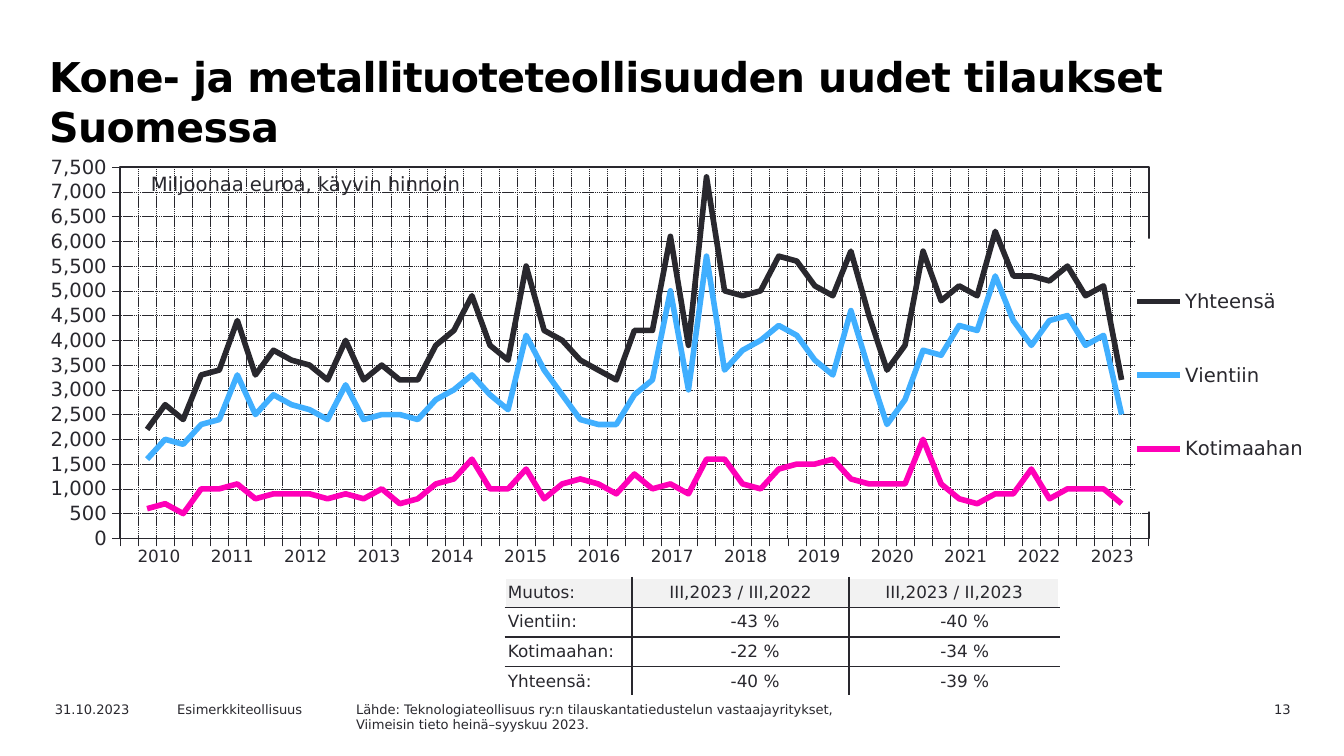
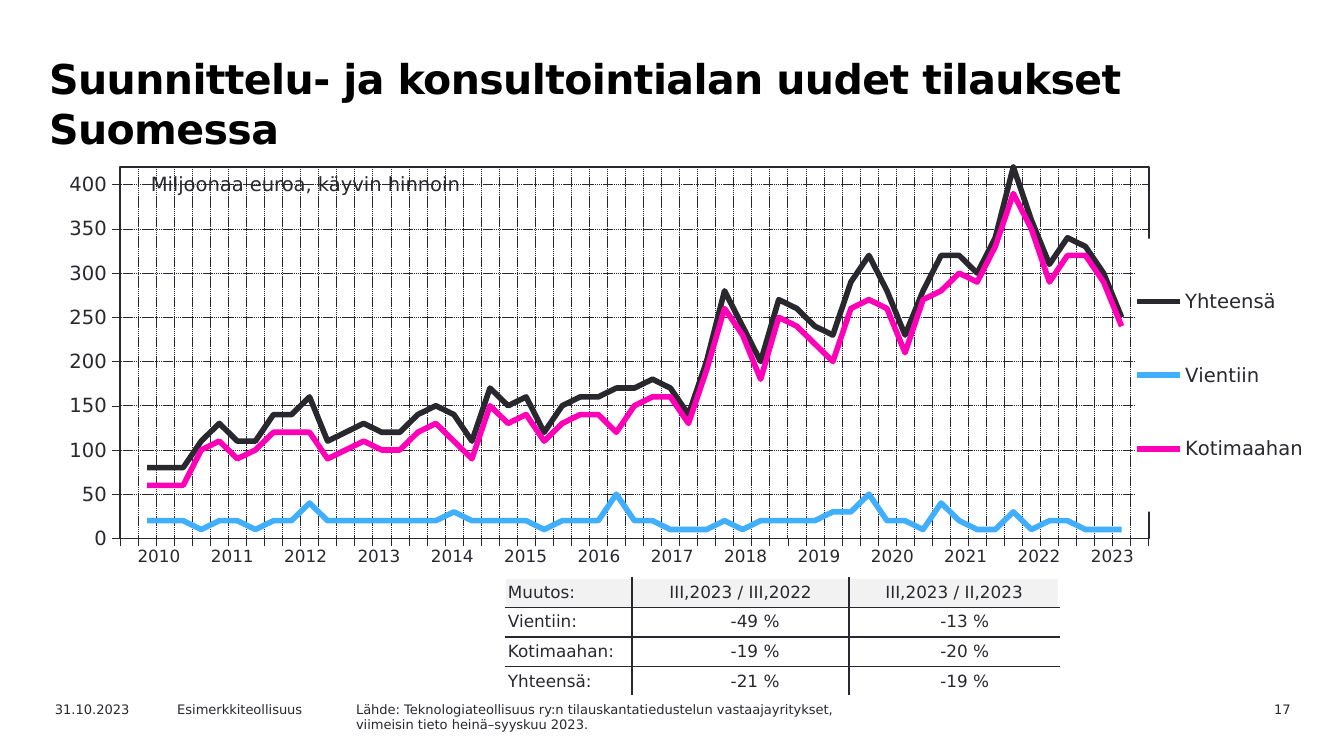
import pptx
import pptx.chart.data
import pptx.dml.color
import pptx.enum.chart
import pptx.enum.dml
import pptx.enum.text
import pptx.oxml
import pptx.oxml.ns
import pptx.util

Cm, Pt = pptx.util.Cm, pptx.util.Pt
ALIGN = pptx.enum.text.PP_ALIGN
INK, BLACK, WHITE, HEADER_FILL = "29282E", "000000", "FFFFFF", "F2F2F2"
SERIES_COLORS = {"Yhteensä": INK, "Vientiin": "40AFFF", "Kotimaahan": "FF00B8"}
FONT = "DejaVu Sans"
NO_TABLE_STYLE = "{2D5ABB26-0587-4C30-8999-92F81FD0307C}"

DATE = "31.10.2023"
ORGANISATION = "Esimerkkiteollisuus"
SOURCE = "Lähde: Teknologiateollisuus ry:n tilauskantatiedustelun vastaajayritykset,"
UNIT = "Miljoonaa euroa, käyvin hinnoin"
YEARS = range(2010, 2024)
QUARTERS = len(YEARS) * 4 - 1
CHANGE_HEADER = ("Muutos:", "III,2023 / III,2022", "III,2023 / II,2023")


def mostly(usual, exceptions):
    """Return one value a quarter: the usual one, or that of the exceptional quarters."""
    by_quarter = {quarter: value for value, quarters in exceptions.items() for quarter in quarters}
    return [by_quarter.get(quarter, usual) for quarter in range(QUARTERS)]


SLIDES = [
    {
        "title": "Kone- ja metallituoteteollisuuden uudet tilaukset Suomessa",
        "title_spacing": None,
        "page": "13",
        "latest": "Viimeisin tieto heinä–syyskuu 2023.",
        "maximum": 7500,
        "step": 500,
        "export": [
            1600, 2000, 1900, 2300, 2400, 3300, 2500, 2900, 2700, 2600, 2400, 3100, 2400, 2500,
            2500, 2400, 2800, 3000, 3300, 2900, 2600, 4100, 3400, 2900, 2400, 2300, 2300, 2900,
            3200, 5000, 3000, 5700, 3400, 3800, 4000, 4300, 4100, 3600, 3300, 4600, 3400, 2300,
            2800, 3800, 3700, 4300, 4200, 5300, 4400, 3900, 4400, 4500, 3900, 4100, 2500],
        "domestic": [
            600, 700, 500, 1000, 1000, 1100, 800, 900, 900, 900, 800, 900, 800, 1000,
            700, 800, 1100, 1200, 1600, 1000, 1000, 1400, 800, 1100, 1200, 1100, 900, 1300,
            1000, 1100, 900, 1600, 1600, 1100, 1000, 1400, 1500, 1500, 1600, 1200, 1100, 1100,
            1100, 2000, 1100, 800, 700, 900, 900, 1400, 800, 1000, 1000, 1000, 700],
        "changes": [("Vientiin:", "-43 %", "-40 %"),
                    ("Kotimaahan:", "-22 %", "-34 %"),
                    ("Yhteensä:", "-40 %", "-39 %")],
    },
    {
        "title": "Suunnittelu- ja konsultointialan uudet tilaukset Suomessa",
        "title_spacing": Pt(27),
        "page": "17",
        "latest": "viimeisin tieto heinä–syyskuu 2023.",
        "maximum": 420,
        "step": 50,
        "export": mostly(20, {
            10: (3, 6, 22, 29, 30, 31, 33, 43, 46, 47, 49, 52, 53, 54),
            30: (17, 38, 39, 48),
            40: (9, 44),
            50: (26, 40)}),
        "domestic": [
            60, 60, 60, 100, 110, 90, 100, 120, 120, 120, 90, 100, 110, 100,
            100, 120, 130, 110, 90, 150, 130, 140, 110, 130, 140, 140, 120, 150,
            160, 160, 130, 190, 260, 230, 180, 250, 240, 220, 200, 260, 270, 260,
            210, 270, 280, 300, 290, 330, 390, 350, 290, 320, 320, 290, 240],
        "changes": [("Vientiin:", "-49 %", "-13 %"),
                    ("Kotimaahan:", "-19 %", "-20 %"),
                    ("Yhteensä:", "-21 %", "-19 %")],
    },
]


def rgb(color):
    return pptx.dml.color.RGBColor.from_string(color)


def set_attributes(target, **values):
    for name, value in values.items():
        setattr(target, name, value)


def format_font(font, size, color=INK, name=FONT, bold=False):
    set_attributes(font, size=Pt(size), name=name, bold=bold)
    font.color.rgb = rgb(color)


def format_line(line, width, color=INK, dash=None):
    line.color.rgb = rgb(color)
    line.width = Pt(width)
    if dash:
        line.dash_style = dash


def add_text(slide, place, lines, size=7, align=None, color=INK, bold=False, wrap=True, **margins):
    frame = slide.shapes.add_textbox(*map(Cm, place)).text_frame
    set_attributes(frame, word_wrap=wrap, text="\n".join(lines), **margins)
    for paragraph in frame.paragraphs:
        paragraph.alignment = align
        format_font(paragraph.runs[0].font, size, color, bold=bold)
    return frame


def add_title(slide, text, spacing):
    frame = add_text(slide, (0.71, 0.79, 23.39, 1.8), [text], 22, color=BLACK, bold=True,
                     margin_left=Cm(0.22), margin_top=Cm(0.19))
    paragraph = frame.paragraphs[0]
    paragraph.line_spacing = spacing
    paragraph.runs[0].font._element.set("spc", "-30")


def add_footer(slide, page, latest):
    top, height = 13.13, 0.46
    for left, width, lines, align in [
        (22.25, 2.39, [page], ALIGN.RIGHT),
        (0.79, 2.54, [DATE], None),
        (3.1, 3.61, [ORGANISATION], None),
        (6.48, 12.88, [SOURCE, latest], None),
    ]:
        add_text(slide, (left, top, width, height), lines, align=align)


def chart_xml(body):
    return pptx.oxml.parse_xml(body.replace(">", f" {pptx.oxml.ns.nsdecls('c', 'a')}>", 1))


def manual_layout(x, y, w, h, inner=False):
    target = '<c:layoutTarget val="inner"/>' if inner else ""
    modes = '<c:xMode val="edge"/><c:yMode val="edge"/>'
    sizes = "".join(f'<c:{key} val="{value}"/>' for key, value in zip("xywh", (x, y, w, h)))
    return chart_xml(f"<c:layout><c:manualLayout>{target}{modes}{sizes}</c:manualLayout></c:layout>")


def remove_layout(element):
    for layout in element.findall(pptx.oxml.ns.qn("c:layout")):
        element.remove(layout)


def format_axis(axis):
    ticks = pptx.enum.chart.XL_TICK_MARK
    set_attributes(axis, has_major_gridlines=True, major_tick_mark=ticks.OUTSIDE,
                   minor_tick_mark=ticks.NONE)
    format_line(axis.format.line, 0.22)
    format_line(axis.major_gridlines.format.line, 0.25, dash=pptx.enum.dml.MSO_LINE.SQUARE_DOT)


def format_legend(chart):
    """Put the legend on a white panel that covers the right end of the plot."""
    chart.has_legend = True
    legend = chart.legend
    set_attributes(legend, position=pptx.enum.chart.XL_LEGEND_POSITION.RIGHT, include_in_layout=False)
    format_font(legend.font, 10.5)
    remove_layout(legend._element)
    overlay = legend._element.find(pptx.oxml.ns.qn("c:overlay"))
    overlay.addprevious(manual_layout(0.86, 0.2, 0.13, 0.61))
    overlay.addnext(chart_xml(
        f'<c:spPr><a:solidFill><a:srgbClr val="{WHITE}"/></a:solidFill>'
        "<a:ln><a:noFill/></a:ln></c:spPr>"))


def format_plot_area(chart):
    plot_area = chart._chartSpace.chart.plotArea
    remove_layout(plot_area)
    plot_area.insert(0, manual_layout(0.08, 0.04, 0.79, 0.83, inner=True))
    plot_area.append(chart_xml(
        '<c:spPr><a:noFill/><a:ln w="12700"><a:solidFill>'
        f'<a:srgbClr val="{INK}"/></a:solidFill></a:ln></c:spPr>'))
    for crossing in plot_area.iter(pptx.oxml.ns.qn("c:crossBetween")):
        crossing.set("val", "midCat")


def add_orders_chart(slide, export, domestic, maximum, step):
    total = [sum(pair) for pair in zip(export, domestic)]
    data = pptx.chart.data.CategoryChartData()
    data.categories = [str(number + 1) for number in range(QUARTERS + 2)]
    for name, values in zip(SERIES_COLORS, (total, export, domestic)):
        data.add_series(name, [None, *values, None])
    chart = slide.shapes.add_chart(pptx.enum.chart.XL_CHART_TYPE.LINE,
                                   *map(Cm, (0.3, 2.82, 24.61, 8.46)), data).chart
    chart.has_title = False
    format_font(chart.font, 19.5, name="Arial", bold=True)
    chart.plots[0].vary_by_categories = False
    for series in chart.plots[0].series:
        series.smooth = False
        format_line(series.format.line, 3, SERIES_COLORS[series.name])
    for axis in (chart.category_axis, chart.value_axis):
        format_axis(axis)
    chart.category_axis.tick_label_position = pptx.enum.chart.XL_TICK_LABEL_POSITION.NONE
    set_attributes(chart.value_axis, minimum_scale=0, maximum_scale=maximum, major_unit=step)
    labels = chart.value_axis.tick_labels
    set_attributes(labels, number_format="#,##0", number_format_is_linked=False)
    format_font(labels.font, 10.5)
    format_legend(chart)
    format_plot_area(chart)


def set_borders(cell, colors):
    """Draw 1 pt borders in the order left, right, top, bottom."""
    properties = cell._tc.get_or_add_tcPr()
    for index, (side, color) in enumerate(zip("LRTB", colors)):
        properties.insert(index, pptx.oxml.parse_xml(
            f'<a:ln{side} {pptx.oxml.ns.nsdecls("a")} w="12700"><a:solidFill>'
            f'<a:srgbClr val="{color}"/></a:solidFill></a:ln{side}>'))


def add_table(slide, left, top, widths, row_height, rows):
    shape = slide.shapes.add_table(len(rows), len(widths), Cm(left), Cm(top),
                                   Cm(sum(widths)), Cm(row_height * len(rows)))
    table = shape.table
    set_attributes(table, first_row=False, horz_banding=False)
    table._tbl.tblPr.find(pptx.oxml.ns.qn("a:tableStyleId")).text = NO_TABLE_STYLE
    for column, width in zip(table.columns, widths):
        column.width = Cm(width)
    for row, texts in zip(table.rows, rows):
        row.height = Cm(row_height)
        for cell, text in zip(row.cells, texts):
            cell.text = text
            cell.fill.background()
            paragraph = cell.text_frame.paragraphs[0]
            paragraph.alignment = ALIGN.CENTER
            format_font(paragraph.runs[0].font, 9)
    return table


def add_change_table(slide, changes):
    rows = [CHANGE_HEADER, *changes]
    table = add_table(slide, 9.55, 10.92, (2.39, 4.11, 3.96), 0.56, rows)
    last_row, last_column = len(rows) - 1, len(CHANGE_HEADER) - 1
    inset, number_inset = Cm(0.05), Cm(1.32)
    for r, row in enumerate(table.rows):
        for c, cell in enumerate(row.cells):
            is_number = r > 0 and c > 0
            set_attributes(cell, vertical_anchor=pptx.enum.text.MSO_ANCHOR.MIDDLE,
                           margin_left=inset, margin_top=inset, margin_bottom=inset,
                           margin_right=number_inset if is_number else inset)
            paragraph = cell.text_frame.paragraphs[0]
            if c == 0:
                paragraph.alignment = ALIGN.LEFT
            elif is_number:
                paragraph.alignment = ALIGN.RIGHT
            if r in (0, last_row):
                cell.fill.solid()
                cell.fill.fore_color.rgb = rgb(WHITE if r else HEADER_FILL)
            outer_edges = (c == 0, c == last_column, r == 0, r == last_row)
            set_borders(cell, [WHITE if outer else INK for outer in outer_edges])


def add_year_labels(slide):
    years = [str(year) for year in YEARS]
    add_table(slide, 2.31, 10.21, [19.41 / len(years)] * len(years), 0.79, [years])


def main():
    presentation = pptx.Presentation()
    set_attributes(presentation, slide_width=Cm(25.4), slide_height=Cm(14.29))
    for content in SLIDES:
        slide = presentation.slides.add_slide(presentation.slide_layouts[6])
        add_title(slide, content["title"], content["title_spacing"])
        add_footer(slide, content["page"], content["latest"])
        add_orders_chart(slide, content["export"], content["domestic"],
                         content["maximum"], content["step"])
        add_text(slide, (2.62, 3.12, 6.6, 0.69), [UNIT], 10.5, wrap=False,
                 margin_left=Cm(0.23), margin_right=Cm(0.23))
        add_change_table(slide, content["changes"])
        add_year_labels(slide)
    presentation.save("out.pptx")


if __name__ == "__main__":
    main()
